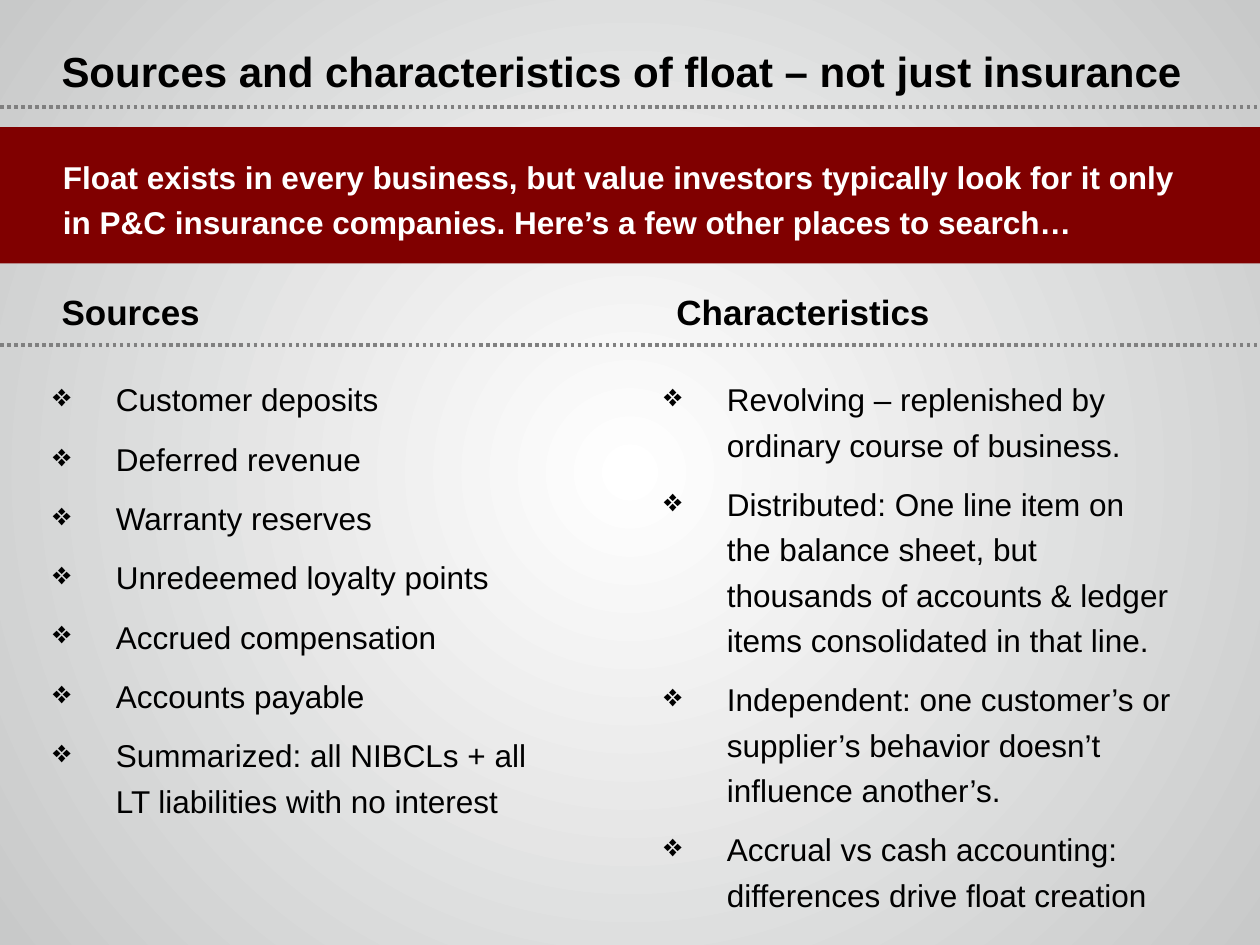
from pptx import Presentation
from pptx.dml.color import RGBColor
from pptx.enum.dml import MSO_LINE_DASH_STYLE as Dash
from pptx.enum.shapes import MSO_CONNECTOR as Connector, MSO_SHAPE as Shape
from pptx.enum.text import MSO_ANCHOR as Anchor, PP_ALIGN as Align
from pptx.oxml import parse_xml
from pptx.oxml.ns import nsdecls
from pptx.oxml.xmlchemy import OxmlElement
from pptx.util import Inches, Pt

# Grid of 100 columns and 75 rows
COLUMNS, ROWS = 100, 75
HEADING_HEIGHT = 6
HEADING_ROW, RULE_ROW, LIST_ROW = 21.7, 27.4, 29.1
RIGHT_COLUMN = 52.7

SOURCES = [
    "Customer deposits",
    "Deferred revenue",
    "Warranty reserves",
    "Unredeemed loyalty points",
    "Accrued compensation",
    "Accounts payable",
    "Summarized: all NIBCLs + all LT liabilities with no interest",
]
CHARACTERISTICS = [
    "Revolving – replenished by ordinary course of business.",
    "Distributed: One line item on the balance sheet, but thousands of "
    "accounts & ledger items consolidated in that line.",
    "Independent: one customer’s or supplier’s behavior doesn’t influence another’s.",
    "Accrual vs cash accounting: differences drive float creation",
]


def color(value):
    return RGBColor.from_string(value)


def apply(target, values):
    for name, value in values.items():
        setattr(target, name, value)


class SlideBuilder:
    font_name = "Arial"
    black, white, red, gray, edge = "000000", "FFFFFF", "800000", "808080", "C8C9C9"

    def __init__(self, presentation):
        self.width = presentation.slide_width
        self.height = presentation.slide_height
        self.slide = presentation.slides.add_slide(presentation.slide_layouts[6])

    def place(self, column, row, columns, rows):
        return (int(self.width * column / COLUMNS), int(self.height * row / ROWS),
                int(self.width * columns / COLUMNS), int(self.height * rows / ROWS))

    def background(self):
        """Radial gradient, light in the centre."""
        stops = "".join(
            f'<a:gs pos="{position}"><a:srgbClr val="{value}"/></a:gs>'
            for position, value in ((0, self.white), (100000, self.edge)))
        self.slide.element.cSld.insert(0, parse_xml(
            f'<p:bg {nsdecls("p", "a")}><p:bgPr><a:gradFill rotWithShape="1">'
            f'<a:gsLst>{stops}</a:gsLst><a:path path="circle">'
            '<a:fillToRect l="50000" t="50000" r="50000" b="50000"/></a:path>'
            '</a:gradFill><a:effectLst/></p:bgPr></p:bg>'))

    def set_text(self, shape, texts, size, bold=False, ink=black, frame=None, spacing=None):
        text_frame = shape.text_frame
        apply(text_frame, {"word_wrap": True, **(frame or {})})
        text_frame.text = "\n".join(texts)
        for paragraph in text_frame.paragraphs:
            apply(paragraph, {"alignment": Align.LEFT, **(spacing or {})})
            for run in paragraph.runs:
                apply(run.font, {"name": self.font_name, "size": Pt(size), "bold": bold})
                run.font.color.rgb = color(ink)
        return text_frame.paragraphs

    def heading(self, text, column, row, size):
        box = self.slide.shapes.add_textbox(*self.place(column, row, 94.4, HEADING_HEIGHT))
        self.set_text(box, [text], size, True, frame={"vertical_anchor": Anchor.MIDDLE})

    def banner(self, text, row, rows):
        shape = self.slide.shapes.add_shape(
            Shape.RECTANGLE, *self.place(0, row, COLUMNS, rows))
        shape.shadow.inherit = False
        shape.fill.solid()
        shape.fill.fore_color.rgb = color(self.red)
        shape.line.fill.background()
        self.set_text(shape, [text], 18, True, self.white,
                      {"vertical_anchor": Anchor.MIDDLE,
                       "margin_left": Inches(0.5), "margin_right": Inches(0.5)},
                      {"line_spacing": 1.2, "space_before": Pt(3.6)})

    def rule(self, row):
        left, top, width, _ = self.place(0, row, COLUMNS, 0)
        line = self.slide.shapes.add_connector(
            Connector.STRAIGHT, left, top, left + width, top)
        apply(line.line, {"width": Pt(2), "dash_style": Dash.ROUND_DOT})
        line.line.color.rgb = color(self.gray)
        line.element.spPr.append(OxmlElement("a:effectLst"))

    def bullets(self, texts, column, row):
        box = self.slide.shapes.add_textbox(*self.place(column, row, 45.7, 52.6))
        paragraphs = self.set_text(
            box, texts, 18,
            frame={"margin_left": 0, "margin_right": Inches(0.5)},
            spacing={"line_spacing": 1.2, "space_before": Pt(8)})
        for paragraph in paragraphs:
            properties = paragraph._p.get_or_add_pPr()
            properties.set("marL", str(Inches(0.5)))
            properties.set("indent", str(-Inches(0.5)))
            bullet = OxmlElement("a:buChar")
            bullet.set("char", "❖")
            properties.append(bullet)


def main():
    presentation = Presentation()
    apply(presentation, {"slide_width": Inches(10), "slide_height": Inches(7.5)})
    builder = SlideBuilder(presentation)
    builder.background()

    # Title and message
    builder.heading("Sources and characteristics of float – not just insurance", 3.9, 2.6, 24)
    builder.banner(
        "Float exists in every business, but value investors typically look for it only "
        "in P&C insurance companies. Here’s a few other places to search…", 10.1, 10.8)
    builder.rule(8.5)

    # Two lists under their headings
    builder.rule(RULE_ROW)
    for title, texts, heading_column, list_column in (
            ("Sources", SOURCES, 3.9, 4.2),
            ("Characteristics", CHARACTERISTICS, RIGHT_COLUMN, RIGHT_COLUMN)):
        builder.heading(title, heading_column, HEADING_ROW, 20)
        builder.bullets(texts, list_column, LIST_ROW)

    presentation.save("out.pptx")


if __name__ == "__main__":
    main()
